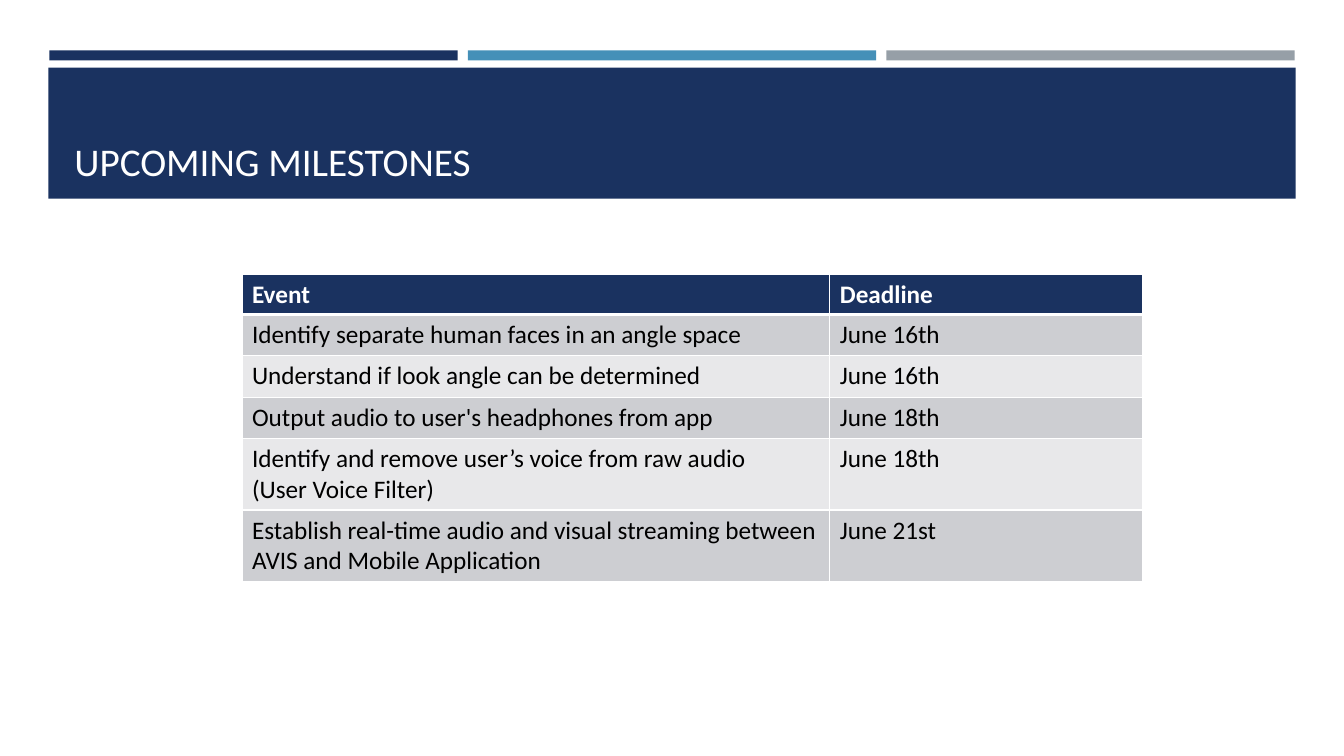
from lxml import etree
from pptx import Presentation
from pptx.dml.color import RGBColor
from pptx.enum import shapes, text
from pptx.oxml import ns
from pptx.util import Inches, Pt

NAVY = RGBColor(0x1A, 0x32, 0x60)
BLUE = RGBColor(0x45, 0x90, 0xB8)
GRAY = RGBColor(0x96, 0x9F, 0xA7)
BAND_DARK = RGBColor(0xCD, 0xCE, 0xD2)
BAND_LIGHT = RGBColor(0xE8, 0xE8, 0xEA)
WHITE = RGBColor(0xFF, 0xFF, 0xFF)
BLACK = RGBColor(0, 0, 0)
FONT = "Calibri"

# Each cell is a list of paragraphs
MILESTONES = [
    (["Event"], ["Deadline"]),
    (["Identify separate human faces in an angle space"], ["June 16th"]),
    (["Understand if look angle can be determined"], ["June 16th"]),
    (["Output audio to user's headphones from app"], ["June 18th"]),
    (["Identify and remove user’s voice from raw audio",
      "(User Voice Filter)"], ["June 18th"]),
    (["Establish real-time audio and visual streaming between "
      "AVIS and Mobile Application"], ["June 21st"]),
]
COLUMN_WIDTHS = [5.83, 3.1]
ROW_HEIGHTS = [0.4, 0.41, 0.41, 0.41, 0.71, 0.71]


def add_bar(slide, x, y, w, h, color):
    sp = slide.shapes.add_shape(shapes.MSO_SHAPE.RECTANGLE,
                                Inches(x), Inches(y), Inches(w), Inches(h))
    sp.shadow.inherit = False
    sp.fill.solid()
    sp.fill.fore_color.rgb = color
    sp.line.fill.background()


def add_run(p, words, size, color, bold=False):
    r = p.add_run()
    r.text = words
    r.font.name = FONT
    r.font.size = Pt(size)
    r.font.bold = bold
    r.font.color.rgb = color


def add_accent_bars(slide, x, y, w, h, gap=0.1):
    colors = [NAVY, BLUE, GRAY]
    bar_w = (w - gap * (len(colors) - 1)) / len(colors)
    for i, color in enumerate(colors):
        add_bar(slide, x + i * (bar_w + gap), y, bar_w, h, color)


def add_title_band(slide, x, y, w, h, title):
    add_bar(slide, x, y, w, h, NAVY)
    box = slide.shapes.add_textbox(Inches(x + 0.16), Inches(y + 0.1),
                                   Inches(w - 0.31), Inches(h - 0.19))
    tf = box.text_frame
    tf.word_wrap = True
    tf.vertical_anchor = text.MSO_ANCHOR.BOTTOM
    p = tf.paragraphs[0]
    p.line_spacing = 0.9
    add_run(p, title, 28, WHITE)


def set_borders(cell, bottom, top):
    tcPr = cell._tc.get_or_add_tcPr()
    for side, width in (("L", 1), ("R", 1), ("T", top), ("B", bottom)):
        ln = etree.SubElement(tcPr, ns.qn("a:ln" + side), w=str(Pt(width)))
        fill = etree.SubElement(ln, ns.qn("a:solidFill"))
        etree.SubElement(fill, ns.qn("a:srgbClr"), val=str(WHITE))


def add_milestone_table(slide, x, y):
    frame = slide.shapes.add_table(
        len(MILESTONES), len(COLUMN_WIDTHS), Inches(x), Inches(y),
        Inches(sum(COLUMN_WIDTHS)), Inches(sum(ROW_HEIGHTS)))
    table = frame.table
    for column, width in zip(table.columns, COLUMN_WIDTHS):
        column.width = Inches(width)
    for row, height in zip(table.rows, ROW_HEIGHTS):
        row.height = Inches(height)

    for i, milestone in enumerate(MILESTONES):
        header = i == 0
        band = NAVY if header else BAND_DARK if i % 2 else BAND_LIGHT
        for j, paragraphs in enumerate(milestone):
            cell = table.cell(i, j)
            # The rule under the header is thicker
            set_borders(cell, bottom=3 if header else 1, top=3 if i == 1 else 1)
            cell.fill.solid()
            cell.fill.fore_color.rgb = band
            tf = cell.text_frame
            for k, words in enumerate(paragraphs):
                p = tf.add_paragraph() if k else tf.paragraphs[0]
                add_run(p, words, 18, WHITE if header else BLACK, header)


def main():
    prs = Presentation()
    prs.slide_width = Inches(13.33)
    prs.slide_height = Inches(7.5)
    slide = prs.slides.add_slide(prs.slide_layouts[6])
    add_accent_bars(slide, 0.49, 0.5, 12.35, 0.1)
    add_title_band(slide, 0.48, 0.67, 12.37, 1.3, "UPCOMING MILESTONES")
    add_milestone_table(slide, 2.4, 2.72)
    prs.save("out.pptx")


if __name__ == "__main__":
    main()
